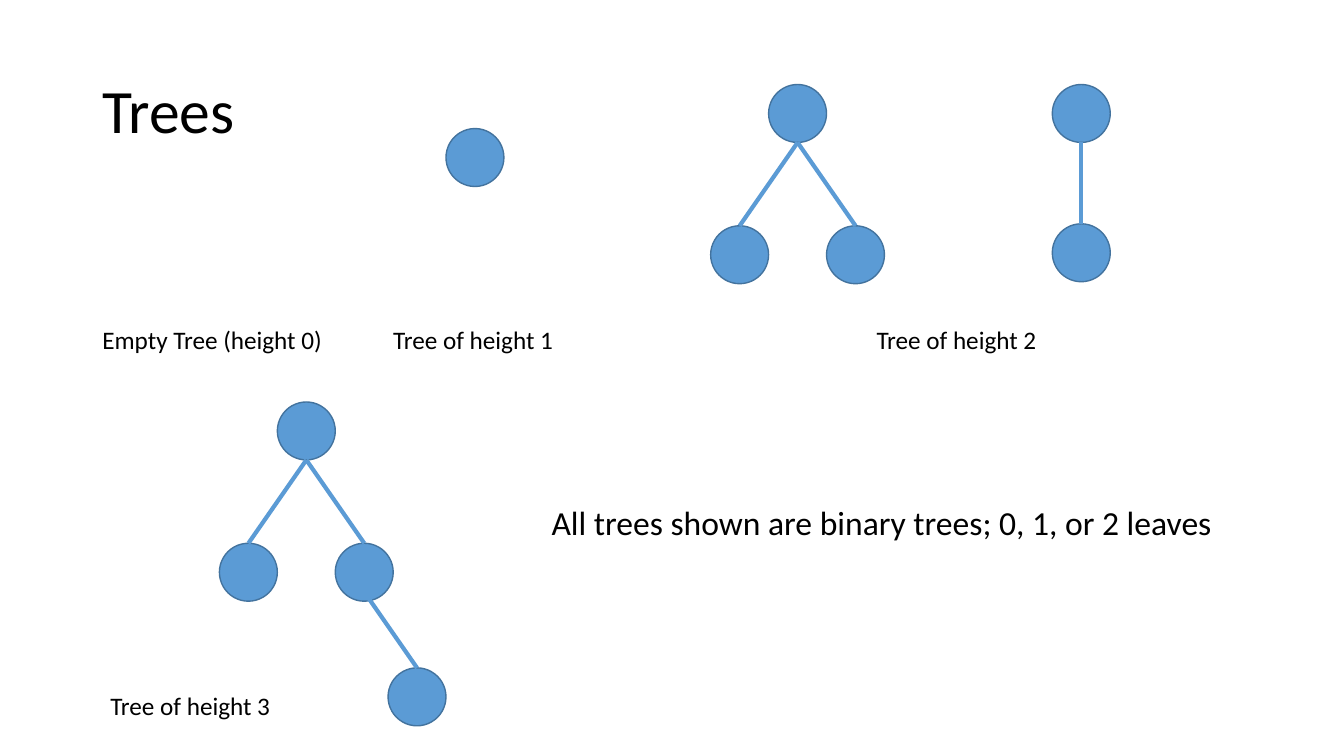
from lxml import etree
from pptx import Presentation
from pptx.dml.color import RGBColor
from pptx.enum.shapes import MSO_CONNECTOR, MSO_SHAPE
from pptx.enum.text import MSO_ANCHOR, MSO_AUTO_SIZE
from pptx.oxml.ns import qn
from pptx.util import Cm, Pt

FONT = "Calibri"
BLACK, BLUE, DARK_BLUE = "000000", "5B9BD5", "43739E"
NODE = 1.46  # node diameter, also the sideways step of an edge
DROP = 2.1   # height of an edge


def color(hex_code):
    return RGBColor.from_string(hex_code)


def add_text(slide, text, left, top, width, height, size):
    box = slide.shapes.add_textbox(Cm(left), Cm(top), Cm(width), Cm(height))
    tf = box.text_frame
    tf.text = text
    font = tf.paragraphs[0].runs[0].font
    font.name, font.size = FONT, Pt(size)
    font.color.rgb = color(BLACK)
    return tf


def add_title(slide, text):
    tf = add_text(slide, text, 2.33, 1.01, 29.21, 3.68, 44)
    tf.word_wrap = True
    tf.vertical_anchor = MSO_ANCHOR.MIDDLE
    tf.paragraphs[0].line_spacing = 0.9


def add_label(slide, text, left, top, width, height=1.03, size=18):
    tf = add_text(slide, text, left, top, width, height, size)
    tf.word_wrap = False
    tf.auto_size = MSO_AUTO_SIZE.SHAPE_TO_FIT_TEXT


def add_node(slide, x, top):
    """Draw a node centred on x."""
    sp = slide.shapes.add_shape(
        MSO_SHAPE.OVAL, Cm(x - NODE / 2), Cm(top), Cm(NODE), Cm(NODE))
    sp.shadow.inherit = False
    sp.fill.solid()
    sp.fill.fore_color.rgb = color(BLUE)
    sp.line.color.rgb = color(DARK_BLUE)
    sp.line.width = Pt(1)


def add_edge(slide, x1, y1, x2, y2):
    line = slide.shapes.add_connector(
        MSO_CONNECTOR.STRAIGHT, Cm(x1), Cm(y1), Cm(x2), Cm(y2))
    line.line.color.rgb = color(BLUE)
    line.line.width = Pt(3)
    etree.SubElement(line._element.spPr, qn("a:effectLst"))


def add_branch(slide, x, y, dx, drop=DROP):
    """Draw an edge from (x, y) and the child node at its lower end."""
    add_node(slide, x + dx, y + drop)
    add_edge(slide, x, y, x + dx, y + drop)


def add_fork(slide, x, top):
    """Draw a root with a left and a right child."""
    add_node(slide, x, top)
    for dx in (-NODE, NODE):
        add_branch(slide, x, top + NODE, dx)


def main():
    prs = Presentation()
    prs.slide_width, prs.slide_height = Cm(33.87), Cm(19.05)
    s = prs.slides.add_slide(prs.slide_layouts[6])

    add_title(s, "Trees")
    for text, left, top, width in (
        ("Empty Tree (height 0)", 2.33, 8.06, 6.12),
        ("Tree of height 1", 9.66, 8.06, 4.6),
        ("Tree of height 2", 21.84, 8.06, 4.6),
        ("Tree of height 3", 2.53, 17.26, 4.6),
    ):
        add_label(s, text, left, top, width)
    add_label(s, "All trees shown are binary trees; 0, 1, or 2 leaves",
              13.65, 12.53, 17.3, 1.28, 24)

    # Height 1
    add_node(s, 11.97, 3.24)

    # Height 2: two children, then one
    add_fork(s, 20.1, 2.13)
    add_node(s, 27.25, 2.13)
    add_branch(s, 27.25, 2.13 + NODE, 0, 2.05)

    # Height 3
    add_fork(s, 7.72, 10.13)
    add_branch(s, 9.05, 14.73, NODE)

    prs.save("out.pptx")


if __name__ == "__main__":
    main()
